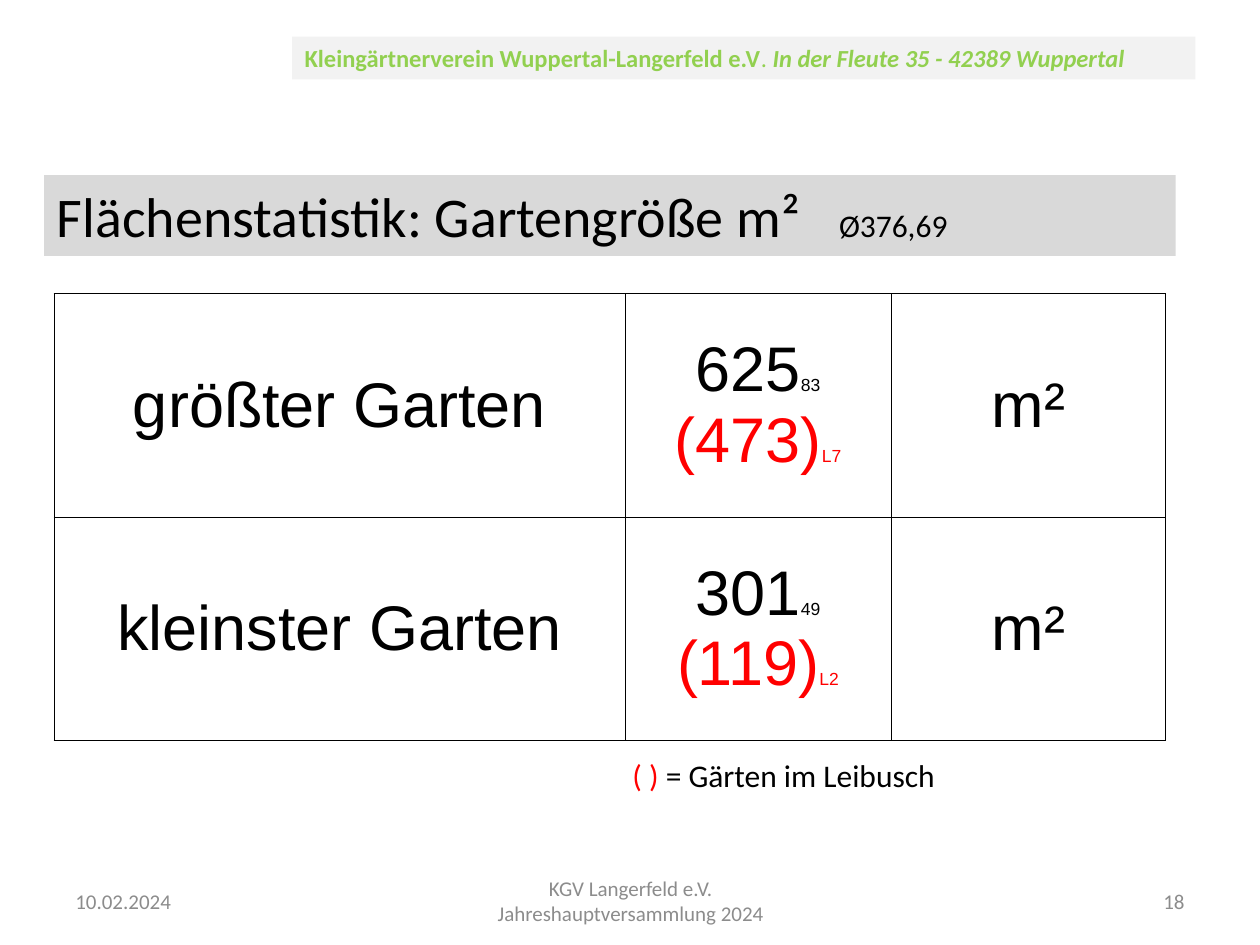
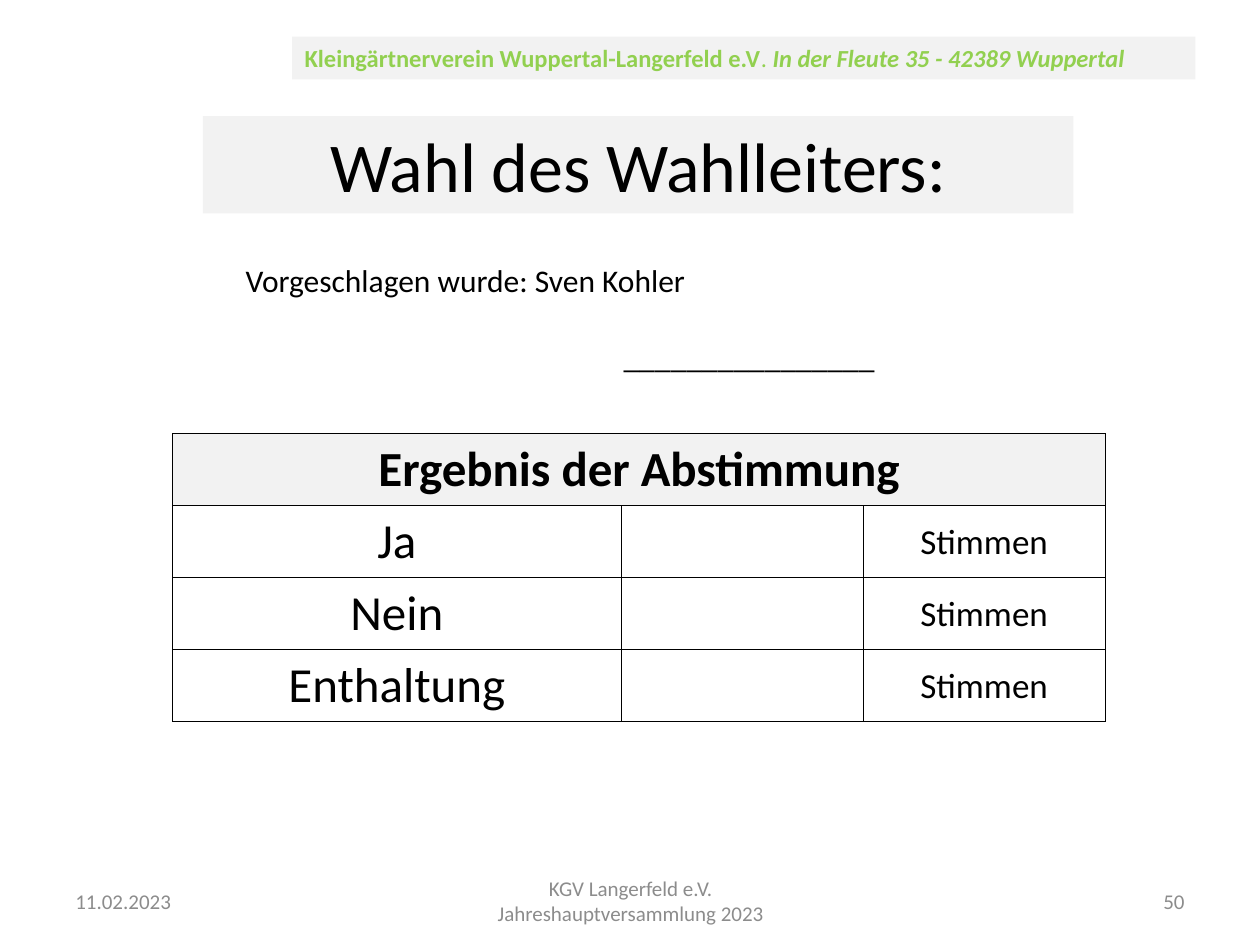
from dataclasses import dataclass
from typing import Optional

from lxml.etree import SubElement
from pptx import Presentation
from pptx.dml.color import RGBColor
from pptx.enum.shapes import MSO_SHAPE as Preset
from pptx.enum.text import MSO_ANCHOR as Anchor, MSO_AUTO_SIZE as AutoSize, PP_ALIGN as Align
from pptx.oxml.ns import qn
from pptx.util import Cm, Pt

# Shared look
BLACK, RED, GREEN, GREY = "000000", "FF0000", "92D050", "8C8C8C"
LIGHT_FILL, TITLE_FILL = "F2F2F2", "D9D9D9"
TITLE_ONLY = 5


@dataclass(frozen=True)
class Place:
    left: float
    top: float
    width: float
    height: float

    def lengths(self) -> tuple:
        return Cm(self.left), Cm(self.top), Cm(self.width), Cm(self.height)


@dataclass(frozen=True)
class Style:
    size: float
    color: str = BLACK
    font: str = "Calibri"
    bold: bool = False
    italic: bool = False


@dataclass(frozen=True)
class Span:
    text: str
    style: Style


@dataclass(frozen=True)
class Line:
    spans: tuple
    align: Align = Align.LEFT
    indent: float = 0
    before: float = 0
    tab: Optional[float] = None


@dataclass(frozen=True)
class Cell:
    lines: tuple = ()
    fill: Optional[str] = None


def line(text: str, style: Style, align: Align = Align.LEFT, **options) -> Line:
    return Line((Span(text, style),), align, **options)


def centred(text: str, style: Style, fill: Optional[str] = None) -> Cell:
    return Cell((line(text, style, Align.CENTER),), fill)


def rgb(color: str) -> RGBColor:
    return RGBColor.from_string(color)


# Text
def set_font(font, style: Style) -> None:
    font.name, font.size = style.font, Pt(style.size)
    font.bold, font.italic = style.bold, style.italic
    font.color.rgb = rgb(style.color)


def write(frame, lines: tuple) -> None:
    for number, item in enumerate(lines):
        para = frame.add_paragraph() if number else frame.paragraphs[0]
        para.alignment = item.align
        if item.before:
            para.space_before = Pt(item.before)
        properties = para._p.get_or_add_pPr()
        if item.indent:
            properties.set("marL", str(Cm(item.indent)))
        if item.tab:
            tabs = SubElement(properties, qn("a:tabLst"))
            SubElement(tabs, qn("a:tab"), pos=str(Cm(item.tab)), algn="l")
        styles = {span.style for span in item.spans}
        if len(styles) == 1:
            set_font(para.font, item.spans[0].style)
        for span in item.spans:
            run = para.add_run()
            run.text = span.text
            if len(styles) > 1:
                set_font(run.font, span.style)


def add_text(page, place: Place, *lines: Line, anchor: Anchor = Anchor.TOP) -> None:
    frame = page.shapes.add_textbox(*place.lengths()).text_frame
    frame.word_wrap, frame.vertical_anchor = True, anchor
    write(frame, lines)


def fill_title(page, place: Place, fill: str, title: Line) -> None:
    box = page.shapes.title
    box.left, box.top, box.width, box.height = place.lengths()
    box.fill.solid()
    box.fill.fore_color.rgb = rgb(fill)
    frame = box.text_frame
    frame.auto_size, frame.vertical_anchor = AutoSize.NONE, Anchor.TOP
    write(frame, (title,))


# Tables
def add_borders(cell) -> None:
    properties = cell._tc.get_or_add_tcPr()
    for number, side in enumerate(("lnL", "lnR", "lnT", "lnB")):
        border = properties.makeelement(qn(f"a:{side}"), {"w": str(Pt(0.5))})
        SubElement(SubElement(border, qn("a:solidFill")), qn("a:srgbClr"), val=BLACK)
        properties.insert(number, border)


def add_grid(page, left: float, top: float, columns: tuple, row_height: float,
             rows: tuple, inset: float = 0):
    place = Place(left, top, sum(columns), row_height * len(rows))
    table = page.shapes.add_table(len(rows), len(columns), *place.lengths()).table
    table.first_row = table.horz_banding = False
    for column, width in zip(table.columns, columns):
        column.width = Cm(width)
    for row, contents in zip(table.rows, rows):
        row.height = Cm(row_height)
        for cell, content in zip(row.cells, contents):
            cell.margin_left = cell.margin_right = cell.margin_top = Cm(inset)
            cell.margin_bottom = 0
            cell.vertical_anchor = Anchor.MIDDLE
            if content.fill:
                cell.fill.solid()
                cell.fill.fore_color.rgb = rgb(content.fill)
            else:
                cell.fill.background()
            add_borders(cell)
            write(cell.text_frame, content.lines)
    return table


# Header band and footer of every page
def add_page(deck, date: str, year: int, number: int):
    page = deck.slides.add_slide(deck.slide_layouts[TITLE_ONLY])
    band = page.shapes.add_shape(Preset.RECTANGLE, *Place(5.89, 0.74, 18.21, 0.86).lengths())
    band.shadow.inherit = False
    band.fill.solid()
    band.fill.fore_color.rgb = rgb(LIGHT_FILL)
    band.line.fill.background()
    band.text_frame.vertical_anchor = Anchor.TOP
    write(band.text_frame, (Line((
        Span("Kleingärtnerverein Wuppertal-Langerfeld e.V", Style(14, GREEN, bold=True)),
        Span(". ", Style(14, GREEN)),
        Span("In der Fleute 35 - 42389 Wuppertal", Style(14, GREEN, bold=True, italic=True)),
    )),))
    footers = (
        (1.27, 5.92, Align.LEFT, (date,)),
        (8.69, 8.05, Align.CENTER, ("KGV Langerfeld e.V.", f"Jahreshauptversammlung {year}")),
        (18.21, 5.92, Align.RIGHT, (str(number),)),
    )
    for left, width, align, texts in footers:
        lines = (line(text, Style(12, GREY), align) for text in texts)
        add_text(page, Place(left, 17.65, width, 1.02), *lines, anchor=Anchor.MIDDLE)
    return page


# Garden sizes
def area_row(label: str, area: str, plot: str, other_area: str, other_plot: str) -> tuple:
    large = Style(36, font="Arial")
    values = tuple(
        Line((Span(value, Style(36, color, "Arial")),
              Span(garden, Style(10, color, "Arial"))), Align.CENTER)
        for value, garden, color in ((area, plot, BLACK), (other_area, other_plot, RED))
    )
    return centred(label, large), Cell(values), centred("m²", large)


def add_area_page(deck) -> None:
    page = add_page(deck, "10.02.2024", 2024, 18)
    fill_title(page, Place(0.89, 3.53, 22.81, 1.63), TITLE_FILL, Line((
        Span("Flächenstatistik: Gartengröße m²\t", Style(32)),
        Span("Ø376,69", Style(18)),
    ), tab=15.77))
    add_grid(page, 1.09, 5.92, (11.51, 5.36, 5.54), 4.5, (
        area_row("größter Garten", "625", "83", "(473)", "L7"),
        area_row("kleinster Garten", "301", "49", "(119)", "L2"),
    ))
    add_text(page, Place(12.5, 15.11, 8.99, 1.02), Line((
        Span("( )", Style(18, RED)), Span(" = Gärten im Leibusch", Style(18)))))


# Vote
def add_vote_page(deck) -> None:
    page = add_page(deck, "11.02.2023", 2023, 50)
    fill_title(page, Place(4.09, 2.34, 17.55, 1.96), LIGHT_FILL,
               line("Wahl des Wahlleiters:", Style(40), Align.CENTER))
    add_text(page, Place(4.7, 5.13, 14.2, 2.57),
             line("Vorgeschlagen wurde: Sven Kohler", Style(18)),
             line("________________", Style(18), indent=7.62, before=22))
    heading = (centred("Ergebnis der Abstimmung", Style(28, bold=True), LIGHT_FILL),
               Cell(fill=LIGHT_FILL), Cell(fill=LIGHT_FILL))
    votes = tuple(
        (centred(choice, Style(28)), Cell(), centred("Stimmen", Style(20)))
        for choice in ("Ja", "Nein", "Enthaltung")
    )
    table = add_grid(page, 3.48, 8.74, (9.04, 4.88, 4.88), 1.45, (heading, *votes), 0.03)
    table.cell(0, 0).merge(table.cell(0, 2))


def main() -> None:
    deck = Presentation()
    deck.slide_width, deck.slide_height = Cm(25.4), Cm(19.05)
    add_area_page(deck)
    add_vote_page(deck)
    deck.save("out.pptx")


if __name__ == "__main__":
    main()
